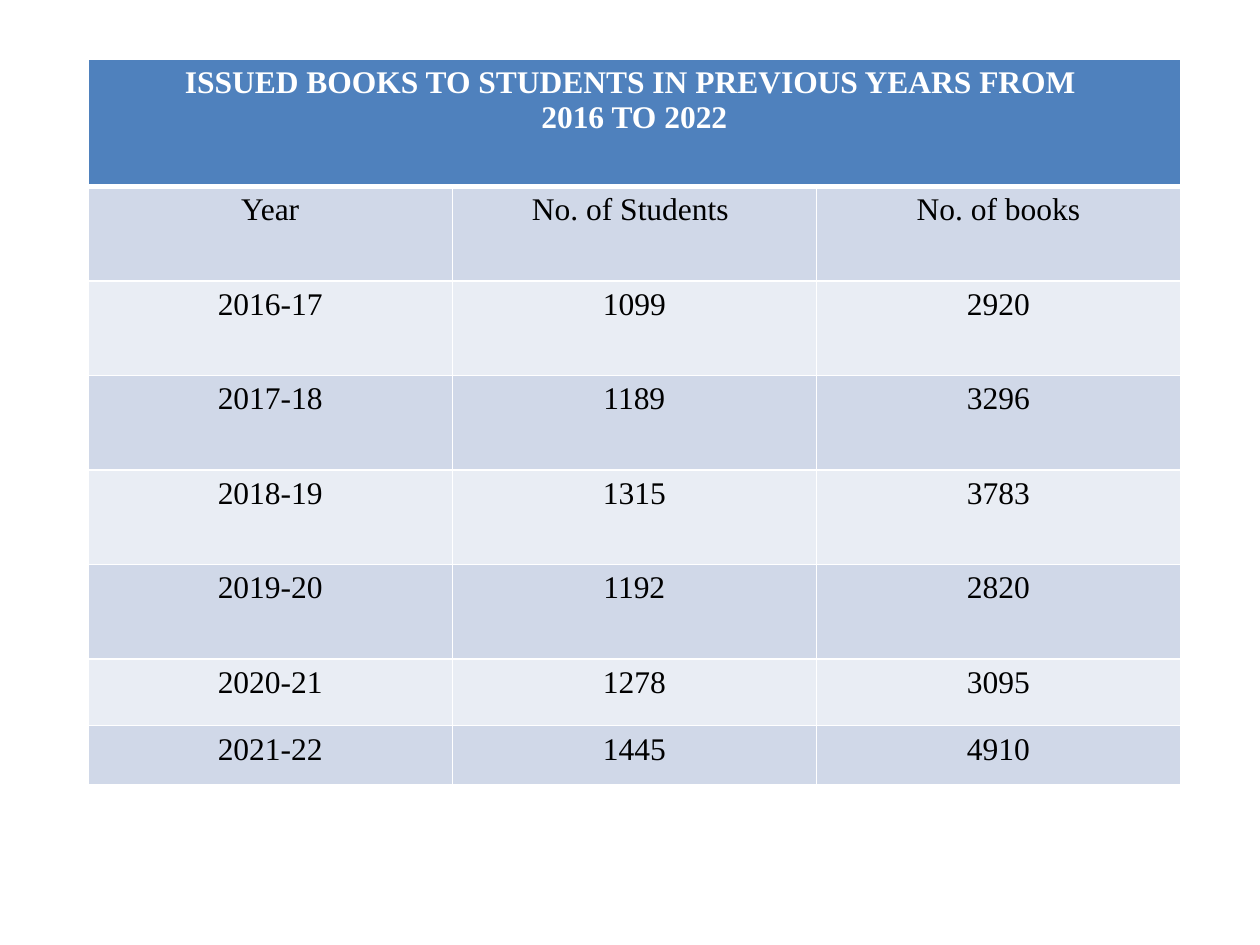
import pptx
import pptx.util
import pptx.dml.color
import pptx.enum.text
import pptx.oxml
import pptx.oxml.ns
from pptx.util import Inches

# Content
HEADING = ["ISSUED BOOKS TO STUDENTS IN PREVIOUS YEARS FROM ", "2016 TO 2022"]
RECORDS = [
    ("Year", "No. of Students ", "No. of books"),
    ("2016-17", "1099", "2920"),
    ("2017-18", "1189", "3296"),
    ("2018-19", "1315", "3783"),
    ("2019-20", "1192", "2820"),
    ("2020-21", "1278", "3095"),
    ("2021-22", "1445", "4910"),
]

# Layout, in inches
LEFT, TOP, COLUMN_WIDTH = 0.7, 0.47, 2.89
ROW_HEIGHTS = [1.01] + [0.75] * 5 + [0.53, 0.47]

THEME = {
    "font": "Times New Roman",
    "size": 18,
    "heading_fill": "4F81BD",
    "bands": ("D0D8E8", "E9EDF4"),
    "heading_text": "FFFFFF",
    "body_text": "000000",
    "border": "FFFFFF",
}


def color(value):
    return pptx.dml.color.RGBColor.from_string(value)


def set_borders(cell, bottom):
    """Draw 1 pt borders, with the bottom one at the given width."""
    properties = cell._tc.get_or_add_tcPr()
    for side, width in (("L", 1), ("R", 1), ("T", 1), ("B", bottom)):
        properties.append(pptx.oxml.parse_xml(
            f'<a:ln{side} {pptx.oxml.ns.nsdecls("a")} w="{pptx.util.Pt(width)}">'
            f'<a:solidFill><a:srgbClr val="{THEME["border"]}"/></a:solidFill>'
            f'</a:ln{side}>'))


def format_cell(cell, lines, fill, text_color, bold=False, bottom=1):
    set_borders(cell, bottom)
    cell.fill.solid()
    cell.fill.fore_color.rgb = color(fill)
    cell.text_frame.text = "\n".join(lines)
    for para in cell.text_frame.paragraphs:
        para.alignment = pptx.enum.text.PP_ALIGN.CENTER
        para.font.name = THEME["font"]
        para.font.size = pptx.util.Pt(THEME["size"])
        para.font.bold = bold
        para.font.color.rgb = color(text_color)


def main():
    deck = pptx.Presentation()
    deck.slide_width, deck.slide_height = Inches(10), Inches(7.5)
    page = deck.slides.add_slide(deck.slide_layouts[6])

    # Table grid
    columns = len(RECORDS[0])
    table = page.shapes.add_table(
        len(ROW_HEIGHTS), columns, Inches(LEFT), Inches(TOP),
        Inches(COLUMN_WIDTH * columns), Inches(sum(ROW_HEIGHTS))).table
    for column in table.columns:
        column.width = Inches(COLUMN_WIDTH)
    for row, height in zip(table.rows, ROW_HEIGHTS):
        row.height = Inches(height)

    # Heading across all columns
    heading = table.cell(0, 0)
    heading.merge(table.cell(0, columns - 1))
    format_cell(heading, HEADING, THEME["heading_fill"],
                THEME["heading_text"], bold=True, bottom=3)

    # Banded records
    for index, record in enumerate(RECORDS):
        for column, value in enumerate(record):
            format_cell(table.cell(index + 1, column), [value],
                        THEME["bands"][index % 2], THEME["body_text"])

    deck.save("out.pptx")


if __name__ == "__main__":
    main()
